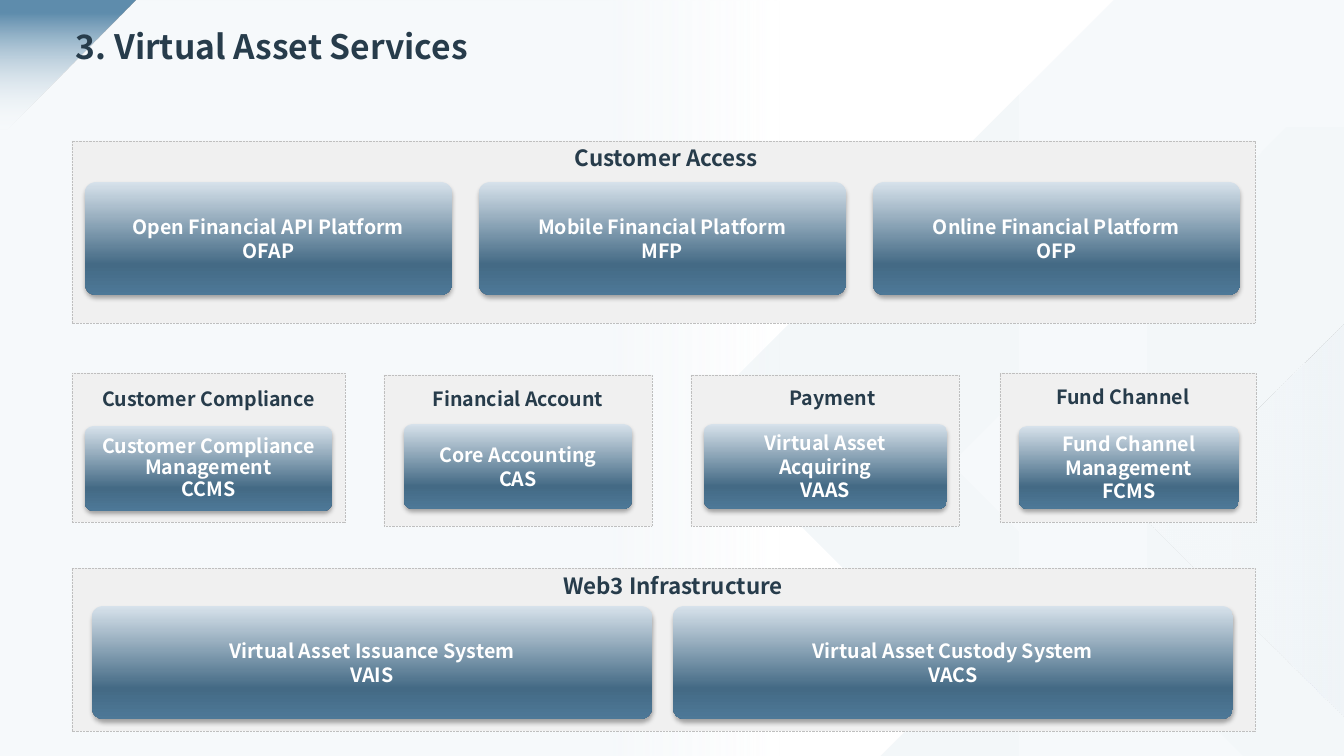
from lxml import etree
from pptx import Presentation
from pptx.dml.color import RGBColor
from pptx.enum.dml import MSO_LINE
from pptx.enum.shapes import MSO_SHAPE
from pptx.enum.text import MSO_ANCHOR, PP_ALIGN
from pptx.oxml.ns import qn
from pptx.util import Pt

WIDTH, HEIGHT = 1344, 756
PX = 12192000 / WIDTH
FONT = "Noto Sans CJK SC"
INK, WHITE, PANEL, PANEL_EDGE = "273C4B", "FFFFFF", "F0F0F0", "BFBFBF"
PALE, MIST = "F6F9FB", "F3F7F9"
STEEL = [(0, "D7E2EB"), (73, "446A85"), (100, "4D7897")]
RECT, ROUND, TRIANGLE = (MSO_SHAPE.RECTANGLE, MSO_SHAPE.ROUNDED_RECTANGLE,
                         MSO_SHAPE.RIGHT_TRIANGLE)
LEFT, CENTER = PP_ALIGN.LEFT, PP_ALIGN.CENTER
TOP, MIDDLE = MSO_ANCHOR.TOP, MSO_ANCHOR.MIDDLE
DOTTED = MSO_LINE.ROUND_DOT

# Outline points, gradient stops, gradient angle
FACETS = [
    ([(1114, 0), (1344, 0), (1344, 756), (881, 756), (956, 681), (694, 419)],
     [(0, PALE), (100, MIST)], 180),
    ([(1287, 127), (1344, 127), (1344, 756), (1243, 756), (951, 464)],
     [(0, PALE), (100, MIST)], 0),
    ([(1344, 324), (1344, 717), (1147, 520)],
     [(0, PALE), (57, MIST), (100, "EFF4F8", 70)], 0),
]

# Panel box; heading and first system box relative to the panel
WIDE_GROUPS = [
    dict(box=(72, 141, 1183, 182), heading="Customer Access",
         heading_box=(462, -4, 265, 29), first=(13, 41, 367, 113), gap=27,
         systems=[["Open Financial API Platform", "OFAP"],
                  ["Mobile Financial Platform", "MFP"],
                  ["Online Financial Platform", "OFP"]]),
    dict(box=(72, 568, 1183, 163), heading="Web3 Infrastructure",
         heading_box=(407, -4, 388, 29), first=(20, 38, 560, 113), gap=21,
         systems=[["Virtual Asset Issuance System", "VAIS"],
                  ["Virtual Asset Custody System", "VACS"]]),
]
NARROW_GROUPS = [
    dict(box=(72, 373, 273, 149), heading="Customer Compliance",
         heading_box=(0, 15, 273, 28), first=(13, 53, 247, 85), spacing=0.9,
         systems=[["Customer Compliance Management", "CCMS"]]),
    dict(box=(384, 375, 268, 151), heading="Financial Account",
         heading_box=(20, 13, 228, 32), first=(20, 49, 228, 85),
         systems=[["Core Accounting", "CAS"]]),
    dict(box=(691, 375, 268, 151), heading="Payment",
         heading_box=(20, 12, 243, 32), first=(13, 49, 243, 85),
         systems=[["Virtual Asset", "Acquiring", "VAAS"]]),
    dict(box=(1000, 373, 256, 149), heading="Fund Channel",
         heading_box=(43, 13, 160, 28), first=(19, 53, 220, 83),
         systems=[["Fund Channel", "Management", "FCMS"]]),
]


def px(*lengths):
    return [round(length * PX) for length in lengths]


def color(hex_string):
    return RGBColor.from_string(hex_string)


def set_gradient(shape, stops, angle):
    """Stops are (percent, colour) or (percent, colour, opacity percent)."""
    shape.fill.gradient()
    gradient = shape._element.spPr.find(qn("a:gradFill"))
    for child in list(gradient):
        gradient.remove(child)
    gradient.set("rotWithShape", "1")
    stop_list = etree.SubElement(gradient, qn("a:gsLst"))
    for position, hex_string, *opacity in stops:
        stop = etree.SubElement(stop_list, qn("a:gs"), pos=str(position * 1000))
        tone = etree.SubElement(stop, qn("a:srgbClr"), val=hex_string)
        for percent in opacity:
            etree.SubElement(tone, qn("a:alpha"), val=str(percent * 1000))
    etree.SubElement(gradient, qn("a:lin"), ang=str(angle * 60000), scaled="0")


def set_soft_shadow(shape):
    effects = shape._element.spPr.find(qn("a:effectLst"))
    shadow = etree.SubElement(effects, qn("a:outerShdw"), blurRad=str(Pt(3.5)),
                              dist=str(Pt(2.2)), dir="5400000", algn="t",
                              rotWithShape="0")
    tone = etree.SubElement(shadow, qn("a:srgbClr"), val="000000")
    etree.SubElement(tone, qn("a:alpha"), val="32000")


def add_plain_shape(slide, preset, box):
    shape = slide.shapes.add_shape(preset, *px(*box))
    shape.shadow.inherit = False
    shape.line.fill.background()
    return shape


def write_text(frame, lines, size=14, ink=INK, align=CENTER, anchor=TOP,
               spacing=None, before=None):
    frame.word_wrap = True
    frame.vertical_anchor = anchor
    for index, line in enumerate(lines):
        paragraph = frame.add_paragraph() if index else frame.paragraphs[0]
        paragraph.alignment = align
        if spacing:
            paragraph.line_spacing = spacing
        if before:
            paragraph.space_before = Pt(before)
        run = paragraph.add_run()
        run.text = line
        run.font.name, run.font.size, run.font.bold = FONT, Pt(size), True
        run.font.color.rgb = color(ink)
        latin = run._r.rPr.find(qn("a:latin"))
        latin.addnext(latin.makeelement(qn("a:ea"), {"typeface": FONT}))


def add_label(slide, box, text, **text_format):
    label = slide.shapes.add_textbox(*px(*box))
    write_text(label.text_frame, [text], **text_format)


def add_backdrop(slide):
    for points, stops, angle in FACETS:
        builder = slide.shapes.build_freeform(*points[0], scale=PX)
        builder.add_line_segments(points[1:], close=True)
        facet = builder.convert_to_shape()
        facet.shadow.inherit = False
        facet.line.fill.background()
        set_gradient(facet, stops, angle)
    veil = add_plain_shape(slide, RECT, (0, 0, WIDTH, HEIGHT))
    set_gradient(veil, [(45, PALE), (58, PALE, 0)], 0)
    corner = add_plain_shape(slide, TRIANGLE, (0, 0, 136, 136))
    corner.rotation = 90
    set_gradient(corner, [(10, "5F8DAD"), (95, PALE, 0)], 0)


def add_system(slide, box, lines, spacing):
    system = add_plain_shape(slide, ROUND, box)
    system.adjustments[0] = 0.1
    set_gradient(system, STEEL, 90)
    set_soft_shadow(system)
    write_text(system.text_frame, lines, ink=WHITE, anchor=MIDDLE, spacing=spacing)


def add_group(slide, box, heading, heading_box, first, systems, gap=0,
              spacing=None, heading_size=14, heading_spacing=0.7):
    """Panel with a heading and a row of equal system boxes."""
    left, top = box[:2]
    panel = add_plain_shape(slide, RECT, box)
    panel.fill.solid()
    panel.fill.fore_color.rgb = color(PANEL)
    panel.line.color.rgb = color(PANEL_EDGE)
    panel.line.width = Pt(0.5)
    panel.line.dash_style = DOTTED
    x, y, width, height = heading_box
    add_label(slide, (left + x, top + y, width, height), heading,
              size=heading_size, spacing=heading_spacing)
    x, y, width, height = first
    for index, lines in enumerate(systems):
        system_left = left + x + index * (width + gap)
        add_system(slide, (system_left, top + y, width, height), lines, spacing)


def main():
    deck = Presentation()
    deck.slide_width, deck.slide_height = px(WIDTH, HEIGHT)
    slide = deck.slides.add_slide(deck.slide_layouts[6])
    add_backdrop(slide)
    add_label(slide, (66, 25, 1235, 51), "3. Virtual Asset Services",
              size=24, align=LEFT, spacing=0.9, before=10)
    for group in NARROW_GROUPS:
        add_group(slide, **group)
    for group in WIDE_GROUPS:
        add_group(slide, heading_size=16, heading_spacing=1.1, **group)
    deck.save("out.pptx")


if __name__ == "__main__":
    main()
